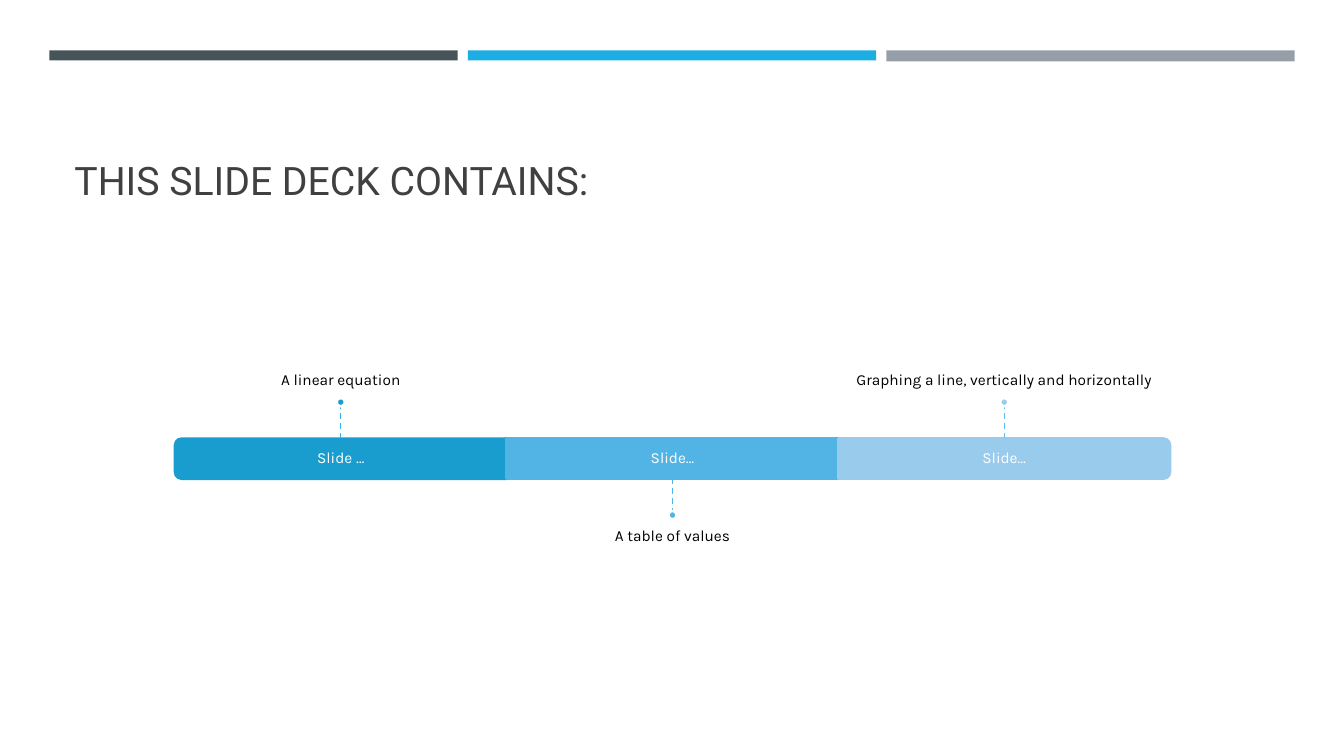
from lxml import etree
from pptx import Presentation
from pptx.dml.color import RGBColor
from pptx.enum.dml import MSO_LINE
from pptx.enum.shapes import MSO_CONNECTOR, MSO_SHAPE
from pptx.enum.text import MSO_ANCHOR, PP_ALIGN
from pptx.oxml.ns import qn
from pptx.util import Inches, Pt

RECTANGLE = MSO_SHAPE.RECTANGLE
ROUNDED_END = MSO_SHAPE.ROUND_2_SAME_RECTANGLE
OVAL = MSO_SHAPE.OVAL
STRAIGHT = MSO_CONNECTOR.STRAIGHT
DASH = MSO_LINE.DASH
TOP, MIDDLE, BOTTOM = MSO_ANCHOR.TOP, MSO_ANCHOR.MIDDLE, MSO_ANCHOR.BOTTOM
LEFT, CENTER = PP_ALIGN.LEFT, PP_ALIGN.CENTER

WHITE = RGBColor(0xFF, 0xFF, 0xFF)
BLACK = RGBColor(0x00, 0x00, 0x00)
CHARCOAL = RGBColor(0x40, 0x40, 0x40)
SLATE = RGBColor(0x46, 0x53, 0x59)
AZURE = RGBColor(0x1C, 0xAD, 0xE4)
GRAY = RGBColor(0x96, 0x9F, 0xA7)
DEEP_BLUE = RGBColor(0x19, 0x9D, 0xCF)
MID_BLUE = RGBColor(0x52, 0xB3, 0xE5)
PALE_BLUE = RGBColor(0x99, 0xCB, 0xEC)
STEM_BLUES = (RGBColor(0x36, 0xB3, 0xE9), RGBColor(0x48, 0xB8, 0xEC),
              RGBColor(0x5A, 0xBE, 0xEF))

HEADER_BARS = ((SLATE, 0.1), (AZURE, 0.1), (GRAY, 0.11))
HEADER_PITCH = 4.15
SEGMENTS = (
    ("Slide …", "A linear equation", DEEP_BLUE, ROUNDED_END, 270, True),
    ("Slide…", "A table of values", MID_BLUE, RECTANGLE, 0, False),
    ("Slide…", "Graphing a line, vertically and horizontally",
     PALE_BLUE, ROUNDED_END, 90, True),
)
FIRST_CENTER = 3.38
SEGMENT_WIDTH = 3.29
BAND_MIDDLE = 4.55
BAND_HEIGHT = 0.4
STEM_LENGTH = 0.32
DOT_SIZE = 0.08
CAPTION_WIDTH = 5.48
CAPTION_HEIGHT = 1.39


def add_filled(page, kind, left, top, width, height, fill, outline=None):
    shape = page.shapes.add_shape(kind, Inches(left), Inches(top),
                                  Inches(width), Inches(height))
    shape.shadow.inherit = False
    shape.fill.solid()
    shape.fill.fore_color.rgb = fill
    if outline is None:
        shape.line.fill.background()
    else:
        shape.line.color.rgb = outline
        shape.line.width = Pt(1.75)
    return shape


def add_text(page, text, left, top, width, height, anchor, color,
             insets=(0, 0, 0, 0), font="Karla", size=11, align=CENTER):
    box = page.shapes.add_textbox(Inches(left), Inches(top),
                                  Inches(width), Inches(height))
    frame = box.text_frame
    frame.word_wrap = True
    frame.vertical_anchor = anchor
    (frame.margin_left, frame.margin_top,
     frame.margin_right, frame.margin_bottom) = map(Inches, insets)
    para = frame.paragraphs[0]
    para.text = text
    para.alignment = align
    para.line_spacing = 0.9
    para.font.name = font
    para.font.size = Pt(size)
    para.font.color.rgb = color


def add_stem(page, center, start, end, color):
    stem = page.shapes.add_connector(STRAIGHT, Inches(center), Inches(start),
                                     Inches(center), Inches(end))
    stem.line.color.rgb = color
    stem.line.width = Pt(1)
    stem.line.dash_style = DASH
    etree.SubElement(stem._element.spPr, qn("a:effectLst"))
    return stem


def add_segment(page, center, segment, stem_color):
    label, caption, color, kind, rotation, caption_above = segment
    left = center - SEGMENT_WIDTH / 2
    top = BAND_MIDDLE - BAND_HEIGHT / 2
    width, height = SEGMENT_WIDTH, BAND_HEIGHT
    if rotation:
        width, height = height, width
    bar = add_filled(page, kind, center - width / 2, BAND_MIDDLE - height / 2,
                     width, height, color, color)
    bar.rotation = rotation
    add_text(page, label, left, top, SEGMENT_WIDTH, BAND_HEIGHT, MIDDLE, WHITE,
             (0.09, 0.09, 0.09, 0.09))

    direction = -1 if caption_above else 1
    edge = BAND_MIDDLE + direction * BAND_HEIGHT / 2
    stem_end = edge + direction * STEM_LENGTH
    dot_end = stem_end + direction * DOT_SIZE
    if caption_above:
        caption_top, anchor, insets = dot_end - CAPTION_HEIGHT, BOTTOM, (0, 0, 0, 0.09)
    else:
        caption_top, anchor, insets = dot_end, TOP, (0, 0.09, 0, 0)
    add_text(page, caption, center - CAPTION_WIDTH / 2, caption_top,
             CAPTION_WIDTH, CAPTION_HEIGHT, anchor, BLACK, insets)
    stem = add_stem(page, center, edge, stem_end, stem_color)
    if kind == RECTANGLE:
        stem.begin_connect(bar, 0 if caption_above else 2)
    add_filled(page, OVAL, center - DOT_SIZE / 2, min(stem_end, dot_end),
               DOT_SIZE, DOT_SIZE, color, WHITE)


def main():
    deck = Presentation()
    deck.slide_width, deck.slide_height = Inches(13.33), Inches(7.5)
    page = deck.slides.add_slide(deck.slide_layouts[6])
    for index, (color, height) in enumerate(HEADER_BARS):
        add_filled(page, RECTANGLE, 0.49 + index * HEADER_PITCH, 0.5,
                   4.05, height, color)
    add_text(page, "THIS SLIDE DECK CONTAINS:", 0.64, 0.77, 12.06, 1.3, BOTTOM,
             CHARCOAL, (0.1, 0.05, 0.1, 0.05), "Roboto", 28, LEFT)
    for index, segment in enumerate(SEGMENTS):
        add_segment(page, FIRST_CENTER + index * SEGMENT_WIDTH, segment,
                    STEM_BLUES[index])
    deck.save("out.pptx")


if __name__ == "__main__":
    main()
